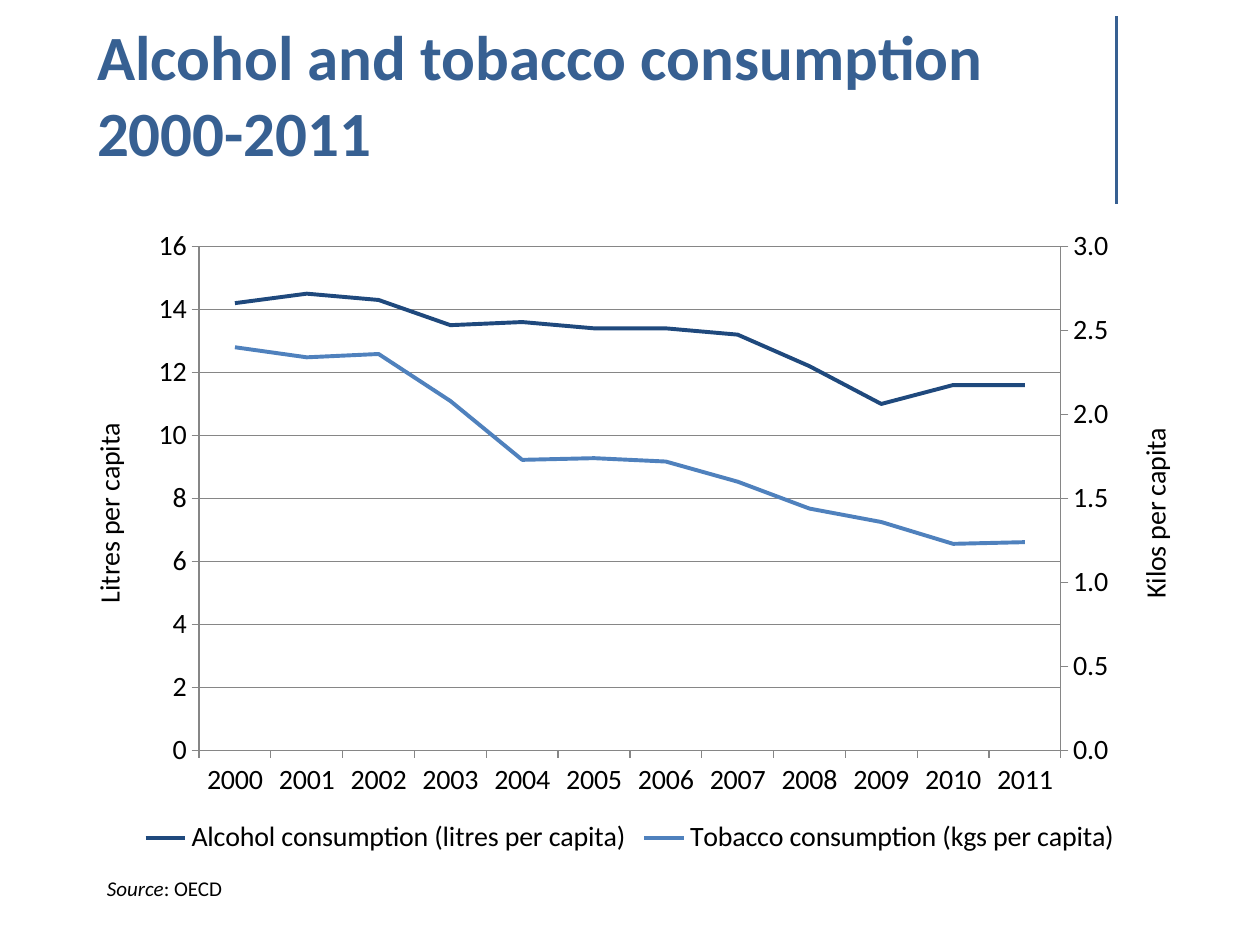
from copy import deepcopy

from pptx import Presentation
from pptx.chart.axis import ValueAxis
from pptx.chart.data import CategoryChartData
from pptx.dml.color import RGBColor
from pptx.enum.chart import XL_CHART_TYPE, XL_LEGEND_POSITION, XL_TICK_MARK
from pptx.enum.shapes import MSO_CONNECTOR
from pptx.enum.text import MSO_ANCHOR, MSO_AUTO_SIZE, PP_ALIGN
from pptx.oxml import parse_xml
from pptx.oxml.ns import nsdecls, qn
from pptx.util import Inches, Pt

TITLE = "Alcohol and tobacco consumption\v2000-2011"
SOURCE = [("Source", True), (": OECD", False)]
YEARS = [str(year) for year in range(2000, 2012)]
SERIES = [
    {"name": "Alcohol consumption (litres per capita)", "color": "1F497D",
     "values": [14.2, 14.5, 14.3, 13.5, 13.6, 13.4, 13.4, 13.2, 12.2, 11, 11.6, 11.6]},
    {"name": "Tobacco consumption (kgs per capita)", "color": "4F81BD",
     "values": [2.4, 2.34, 2.36, 2.08, 1.73, 1.74, 1.72, 1.6, 1.44, 1.36, 1.23, 1.24]},
]
LEFT_AXIS = {"title": "Litres per capita", "maximum": 16, "unit": 2, "format": "General"}
RIGHT_AXIS = {"title": "Kilos per capita", "maximum": 3, "unit": 0.5, "format": "#,##0.0"}
PLOT_LAYOUT = {"x": 0.12, "y": 0.05, "w": 0.76, "h": 0.78}
RIGHT_AXIS_IDS = {"category": "50010", "value": "50020"}

THEME = {
    "font": "Calibri",
    "accent": RGBColor.from_string("376092"),
    "text": RGBColor.from_string("000000"),
    "grid": RGBColor.from_string("868686"),
    "title_size": Pt(36), "chart_size": Pt(16), "source_size": Pt(12),
    "rule_width": Pt(1.5), "series_width": Pt(2.25), "grid_width": Pt(0.75),
}


def format_font(font, size, color=THEME["text"], **extra):
    font.color.rgb = color
    for name, value in {"name": THEME["font"], "size": size, **extra}.items():
        setattr(font, name, value)


def format_line(line, color, width):
    line.color.rgb = color
    line.width = width


def add_title(slide):
    title = slide.shapes.title
    for name, value in {"left": 0.67, "top": 0.44, "width": 8.25, "height": 0.95}.items():
        setattr(title, name, Inches(value))
    frame = title.text_frame
    frame.text = TITLE
    for name, value in {"vertical_anchor": MSO_ANCHOR.BOTTOM, "word_wrap": True,
                        "auto_size": MSO_AUTO_SIZE.NONE}.items():
        setattr(frame, name, value)
    paragraph = frame.paragraphs[0]
    paragraph.alignment = PP_ALIGN.LEFT
    for run in paragraph.runs:
        format_font(run.font, THEME["title_size"], THEME["accent"], bold=True)


def add_rule(slide):
    rule = slide.shapes.add_connector(MSO_CONNECTOR.STRAIGHT, Inches(8.86), Inches(0.13),
                                      Inches(8.86), Inches(1.62))
    format_line(rule.line, THEME["accent"], THEME["rule_width"])
    rule.element.spPr.append(parse_xml(f"<a:effectLst {nsdecls('a')}/>"))


def format_axis(axis, values):
    for name, value in {"minimum_scale": 0, "maximum_scale": values["maximum"],
                        "major_unit": values["unit"]}.items():
        setattr(axis, name, value)
    axis.major_tick_mark = XL_TICK_MARK.OUTSIDE
    axis.tick_labels.number_format = values["format"]
    axis.tick_labels.number_format_is_linked = False
    format_line(axis.format.line, THEME["grid"], THEME["grid_width"])
    frame = axis.axis_title.text_frame
    frame.text = values["title"]
    format_font(frame.paragraphs[0].runs[0].font, THEME["chart_size"], bold=False)


def move_to_right_axis(plot_area):
    """Put the second series in a line plot of its own with a right-hand axis."""
    left_plot = plot_area.find(qn("c:lineChart"))
    category = plot_area.find(qn("c:catAx"))
    value = plot_area.find(qn("c:valAx"))
    right_plot, right_category, right_value = map(deepcopy, (left_plot, category, value))
    left_plot.remove(left_plot.findall(qn("c:ser"))[1])
    right_plot.remove(right_plot.find(qn("c:ser")))
    left_plot.addnext(right_plot)
    value.addnext(right_value)
    right_value.addnext(right_category)

    category_id, value_id = RIGHT_AXIS_IDS["category"], RIGHT_AXIS_IDS["value"]
    for element, axis_id in zip(right_plot.findall(qn("c:axId")), (category_id, value_id)):
        element.set("val", axis_id)
    for axis, settings in (
        (right_category, {"axId": category_id, "crossAx": value_id, "delete": "1"}),
        (right_value, {"axId": value_id, "crossAx": category_id, "axPos": "r", "crosses": "max"}),
    ):
        for tag, setting in settings.items():
            axis.find(qn(f"c:{tag}")).set("val", setting)
    right_axis = ValueAxis(right_value)
    right_axis.has_major_gridlines = False
    format_axis(right_axis, RIGHT_AXIS)


def set_plot_layout(plot_area):
    for old in plot_area.findall(qn("c:layout")):
        plot_area.remove(old)
    sizes = "".join(f'<c:{tag} val="{value}"/>' for tag, value in PLOT_LAYOUT.items())
    plot_area.insert(0, parse_xml(
        f'<c:layout {nsdecls("c")}><c:manualLayout><c:layoutTarget val="inner"/>'
        f'<c:xMode val="edge"/><c:yMode val="edge"/>{sizes}</c:manualLayout></c:layout>'))


def add_consumption_chart(slide):
    data = CategoryChartData()
    data.categories = YEARS
    for series in SERIES:
        data.add_series(series["name"], series["values"])
    chart = slide.shapes.add_chart(XL_CHART_TYPE.LINE, Inches(0.5), Inches(1.7),
                                   Inches(9), Inches(5.13), data).chart
    format_font(chart.font, THEME["chart_size"])
    chart.has_title = False
    chart.has_legend = True
    chart.legend.position = XL_LEGEND_POSITION.BOTTOM
    chart.legend.include_in_layout = False
    chart.plots[0].vary_by_categories = False
    for series, values in zip(chart.plots[0].series, SERIES):
        series.smooth = False
        format_line(series.format.line, RGBColor.from_string(values["color"]),
                    THEME["series_width"])
    chart.category_axis.major_tick_mark = XL_TICK_MARK.OUTSIDE
    format_line(chart.category_axis.format.line, THEME["grid"], THEME["grid_width"])
    format_line(chart.value_axis.major_gridlines.format.line, THEME["grid"], THEME["grid_width"])
    format_axis(chart.value_axis, LEFT_AXIS)

    plot_area = chart.element.find(f"{qn('c:chart')}/{qn('c:plotArea')}")
    move_to_right_axis(plot_area)
    set_plot_layout(plot_area)
    for body in plot_area.iterfind(f"{qn('c:valAx')}/{qn('c:title')}//{qn('a:bodyPr')}"):
        body.set("rot", "-5400000")
        body.set("vert", "horz")


def add_source(slide):
    frame = slide.shapes.add_textbox(Inches(0.75), Inches(6.9), Inches(1.13), Inches(0.3)).text_frame
    frame.word_wrap = False
    frame.auto_size = MSO_AUTO_SIZE.SHAPE_TO_FIT_TEXT
    for text, italic in SOURCE:
        run = frame.paragraphs[0].add_run()
        run.text = text
        format_font(run.font, THEME["source_size"], italic=italic)


def main():
    presentation = Presentation()
    presentation.slide_width = Inches(10)
    presentation.slide_height = Inches(7.5)
    slide = presentation.slides.add_slide(presentation.slide_layouts.get_by_name("Title Only"))
    add_rule(slide)
    add_title(slide)
    add_consumption_chart(slide)
    add_source(slide)
    presentation.save("out.pptx")


if __name__ == "__main__":
    main()
